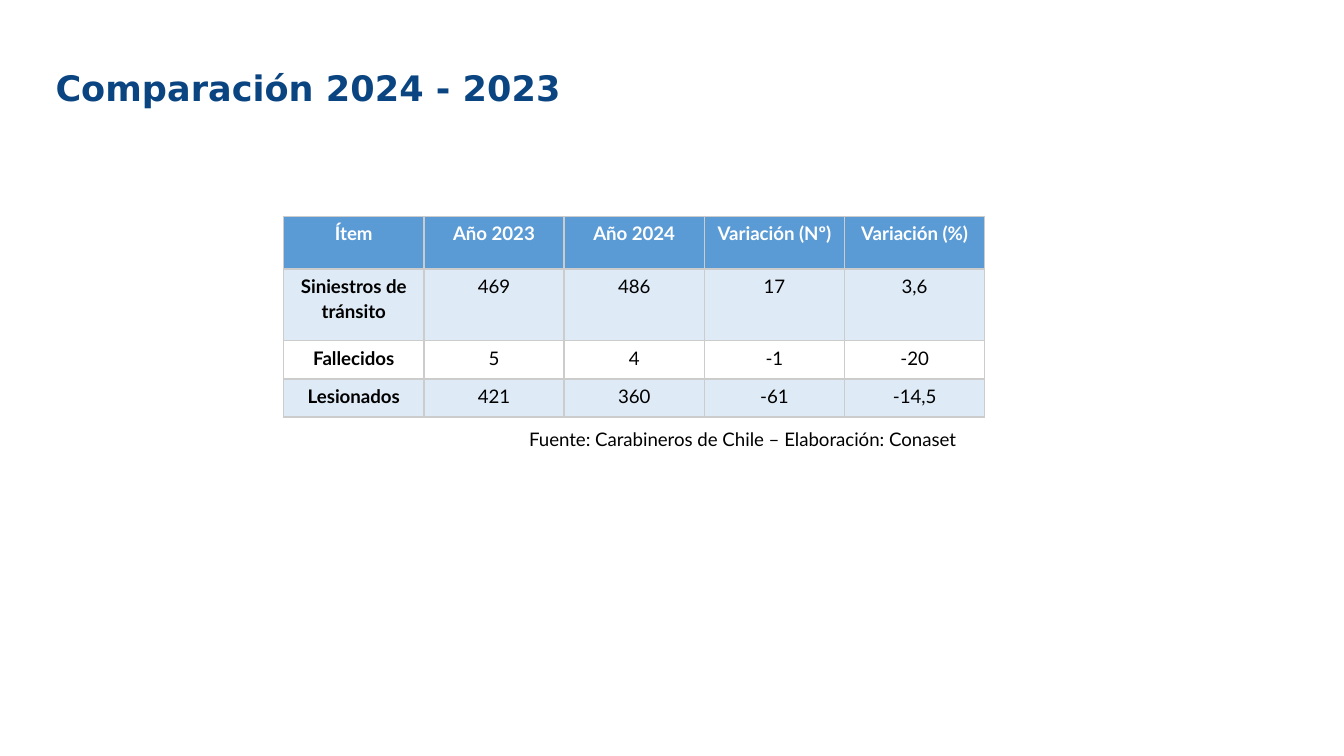
from dataclasses import dataclass

from lxml.etree import SubElement
from pptx import Presentation
from pptx.dml.color import RGBColor as RGB
from pptx.enum.text import MSO_ANCHOR as Anchor, PP_ALIGN as Align
from pptx.oxml.ns import qn
from pptx.util import Cm, Pt

# Content
TITLE = "Comparación 2024 - 2023"
SOURCE = "Fuente: Carabineros de Chile – Elaboración: Conaset"
ROWS = [
    ("Ítem", "Año 2023", "Año 2024", "Variación (Nº)", "Variación (%)"),
    ("Siniestros de tránsito", "469", "486", "17", "3,6"),
    ("Fallecidos", "5", "4", "-1", "-20"),
    ("Lesionados", "421", "360", "-61", "-14,5"),
]

# Layout in centimetres
ROW_HEIGHTS = (0.99, 1.36, 0.72, 0.72)
COLUMN_WIDTH = 2.65
TABLE_LEFT, TABLE_TOP = 5.36, 4.09


@dataclass(frozen=True)
class Theme:
    title_font: str = "DejaVu Sans"
    body_font: str = "Lato"
    title_size: float = 18.8
    body_size: float = 10
    title: str = "0B4581"
    text: str = "000000"
    header_text: str = "FFFFFF"
    header_fill: str = "5B9BD5"
    band_fill: str = "DEEAF6"
    border: str = "CCCCCC"
    border_width: float = 0.94


THEME = Theme()


def style(paragraph, font_name, size, color, bold=False):
    font = paragraph.font
    font.name, font.size, font.bold = font_name, Pt(size), bold
    font.color.rgb = RGB.from_string(color)


def add_text(slide, text, box, insets):
    frame = slide.shapes.add_textbox(*map(Cm, box)).text_frame
    frame.word_wrap = True
    frame.vertical_anchor = Anchor.TOP
    frame.margin_left = frame.margin_right = Cm(insets[0])
    frame.margin_top = frame.margin_bottom = Cm(insets[1])
    paragraph = frame.paragraphs[0]
    paragraph.text = text
    return paragraph


def add_borders(cell):
    properties = cell._tc.get_or_add_tcPr()
    for position, side in enumerate(("lnL", "lnR", "lnT", "lnB")):
        line = SubElement(properties, qn(f"a:{side}"), w=str(Pt(THEME.border_width)))
        properties.insert(position, line)
        fill = SubElement(line, qn("a:solidFill"))
        SubElement(fill, qn("a:srgbClr"), val=THEME.border)


def fill_cell(cell, text, row, column):
    is_header = row == 0
    cell.margin_left = cell.margin_right = Cm(0.08)
    cell.margin_top = cell.margin_bottom = Cm(0.05)
    cell.vertical_anchor = Anchor.TOP
    if is_header or row % 2:
        cell.fill.solid()
        color = THEME.header_fill if is_header else THEME.band_fill
        cell.fill.fore_color.rgb = RGB.from_string(color)
    else:
        cell.fill.background()
    add_borders(cell)
    paragraph = cell.text_frame.paragraphs[0]
    paragraph.text = text
    paragraph.alignment = Align.CENTER
    paragraph.line_spacing = 1.15
    style(paragraph, THEME.body_font, THEME.body_size,
          THEME.header_text if is_header else THEME.text,
          bold=is_header or column == 0)


def add_comparison_table(slide):
    columns = len(ROWS[0])
    table = slide.shapes.add_table(
        len(ROWS), columns, Cm(TABLE_LEFT), Cm(TABLE_TOP),
        Cm(COLUMN_WIDTH * columns), Cm(sum(ROW_HEIGHTS))).table
    for column in table.columns:
        column.width = Cm(COLUMN_WIDTH)
    for row, (values, height) in enumerate(zip(ROWS, ROW_HEIGHTS)):
        table.rows[row].height = Cm(height)
        for column, text in enumerate(values):
            fill_cell(table.cell(row, column), text, row, column)


def main():
    presentation = Presentation()
    presentation.slide_width, presentation.slide_height = Cm(25.4), Cm(14.29)
    slide = presentation.slides.add_slide(presentation.slide_layouts[6])

    # Title
    title = add_text(slide, TITLE, (0.87, 1.24, 23.67, 1.6), (0.18, 0.1))
    title.line_spacing = 0.9
    style(title, THEME.title_font, THEME.title_size, THEME.title, bold=True)

    # Table and its source
    add_comparison_table(slide)
    source = add_text(slide, SOURCE, (9.75, 7.87, 9.12, 0.94), (0.25, 0.25))
    style(source, THEME.body_font, THEME.body_size, THEME.text)

    presentation.save("out.pptx")


if __name__ == "__main__":
    main()
